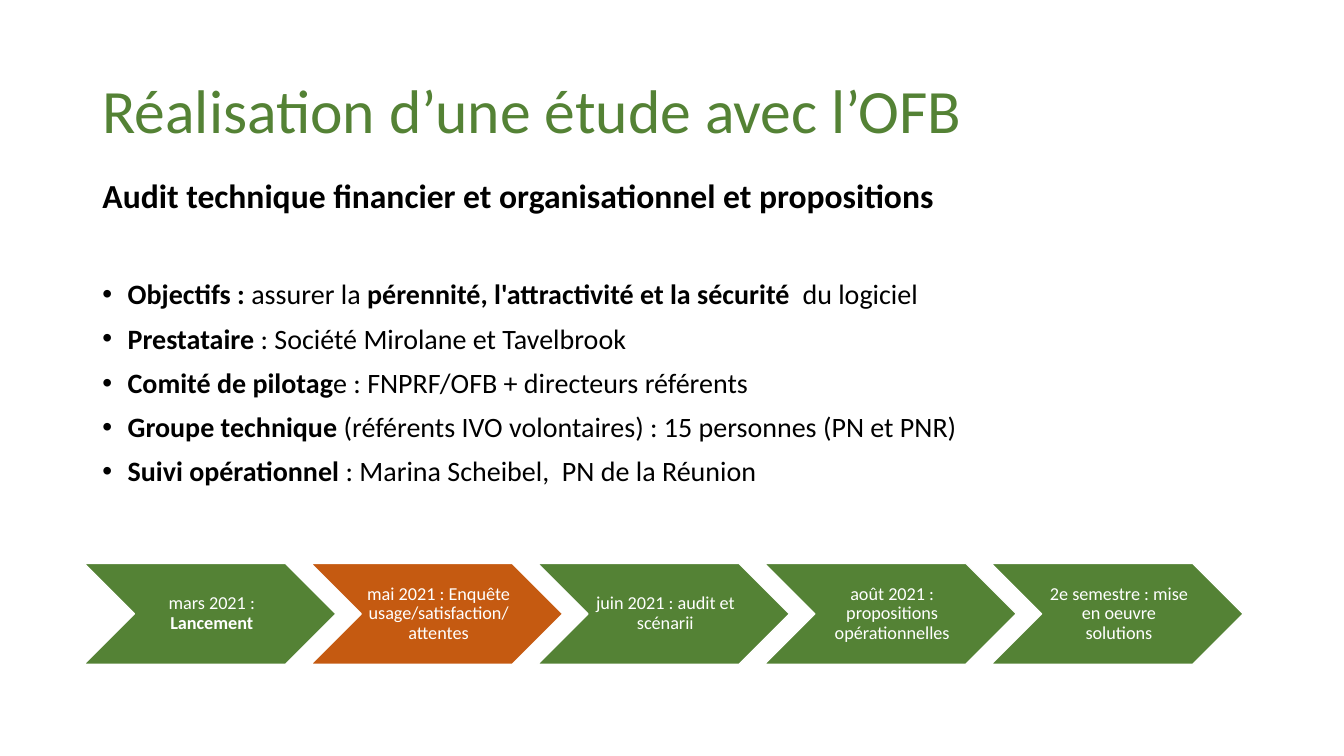
import pptx
import pptx.dml.color
import pptx.enum.shapes
import pptx.enum.text
import pptx.util
from lxml import etree

Pt = pptx.util.Pt
RGBColor = pptx.dml.color.RGBColor
MIDDLE = pptx.enum.text.MSO_ANCHOR.MIDDLE
ALIGN = pptx.enum.text.PP_ALIGN

GREEN = RGBColor(0x54, 0x82, 0x35)
ORANGE = RGBColor(0xC5, 0x5A, 0x11)
BLACK = RGBColor(0x00, 0x00, 0x00)
WHITE = RGBColor(0xFF, 0xFF, 0xFF)
FONT = "Calibri"

TITLE = "Réalisation d’une étude avec l’OFB"
SUBTITLE = "Audit technique financier et organisationnel et propositions"
FACTS = [
    [("Objectifs :", True), (" assurer la ", False),
     ("pérennité, l'attractivité et la sécurité ", True), (" du logiciel", False)],
    [("Prestataire", True), (" : Société Mirolane et Tavelbrook", False)],
    [("Comité de pilotag", True), ("e : FNPRF/OFB + directeurs référents", False)],
    [("Groupe technique ", True),
     ("(référents IVO volontaires) : 15 personnes (PN et PNR)", False)],
    [("Suivi opérationnel ", True), (": Marina Scheibel,  PN de la Réunion", False)],
]
STEPS = [
    ([("mars 2021 : ", False), ("Lancement", True)], GREEN),
    ([("mai 2021 : Enquête usage/satisfaction/ attentes", False)], ORANGE),
    ([("juin 2021 : audit et scénarii", False)], GREEN),
    ([("août 2021 : propositions opérationnelles", False)], GREEN),
    ([("2e semestre : mise en oeuvre solutions", False)], GREEN),
]


def write(paragraph, runs, size, color, align=ALIGN.LEFT, before=0, bullet=None):
    paragraph.alignment = align
    paragraph.line_spacing = 0.9
    paragraph.space_before = Pt(before)
    properties = paragraph._p.get_or_add_pPr()
    indent = Pt(18) if bullet else 0
    properties.set("marL", str(indent))
    properties.set("indent", str(-indent))
    namespace = pptx.oxml.ns.qn("a:buChar" if bullet else "a:buNone")
    mark = etree.SubElement(properties, namespace)
    if bullet:
        mark.set("char", bullet)
    for text, bold in runs:
        run = paragraph.add_run()
        run.text = text
        run.font.name = FONT
        run.font.size = Pt(size)
        run.font.bold = bold
        run.font.color.rgb = color


def place(placeholder, left, top, width, height, anchor):
    placeholder.left, placeholder.top = Pt(left), Pt(top)
    placeholder.width, placeholder.height = Pt(width), Pt(height)
    frame = placeholder.text_frame
    frame.word_wrap = True
    frame.auto_size = pptx.enum.text.MSO_AUTO_SIZE.NONE
    frame.vertical_anchor = anchor
    return frame


def add_heading(slide, left, top, width, height):
    heading = place(slide.shapes.title, left, top, width, height, MIDDLE)
    write(heading.paragraphs[0], [(TITLE, False)], 44, GREEN)


def add_study_facts(slide, left, top, width, height):
    facts = place(slide.placeholders[1], left, top, width, height,
                  pptx.enum.text.MSO_ANCHOR.TOP)
    write(facts.paragraphs[0], [(SUBTITLE, True)], 24, BLACK, before=10)
    for index, runs in enumerate(FACTS):
        write(facts.add_paragraph(), runs, 20, BLACK,
              before=10 if index else 46.4, bullet="•")


def add_timeline(slide, left, top, width, height):
    overlap = 18
    step_width = (width + overlap * (len(STEPS) - 1)) / len(STEPS)
    for index, (runs, color) in enumerate(STEPS):
        step = slide.shapes.add_shape(
            pptx.enum.shapes.MSO_SHAPE.CHEVRON,
            Pt(left + index * (step_width - overlap)), Pt(top),
            Pt(step_width), Pt(height))
        step.shadow.inherit = False
        step.fill.solid()
        step.fill.fore_color.rgb = color
        step.line.color.rgb = WHITE
        step.line.width = Pt(1)
        label = step.text_frame
        label.word_wrap = True
        label.vertical_anchor = MIDDLE
        label.margin_left = Pt(4)
        label.margin_right = label.margin_top = label.margin_bottom = Pt(1.5)
        write(label.paragraphs[0], runs, 13, WHITE, align=ALIGN.CENTER)


def main():
    deck = pptx.Presentation()
    deck.slide_width, deck.slide_height = Pt(960), Pt(540)
    slide = deck.slides.add_slide(deck.slide_layouts[1])
    add_heading(slide, 66, 28.75, 828, 104.4)
    add_study_facts(slide, 66, 124.5, 828, 240.5)
    add_timeline(slide, 60, 402.5, 828, 72)
    deck.save("out.pptx")


if __name__ == "__main__":
    main()
